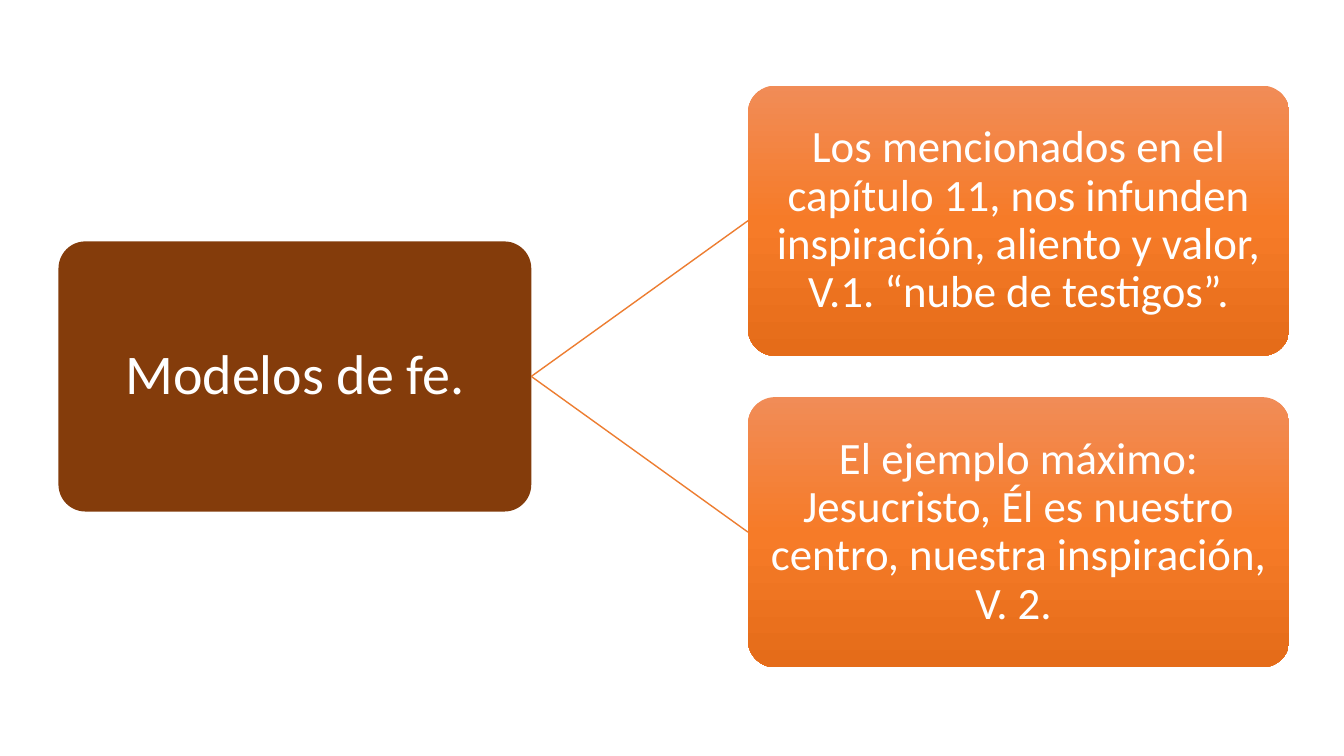
from copy import deepcopy
from dataclasses import dataclass

from pptx import Presentation
from pptx.dml.color import RGBColor
from pptx.enum.shapes import MSO_CONNECTOR, MSO_SHAPE
from pptx.enum.text import MSO_ANCHOR, PP_ALIGN
from pptx.oxml.ns import qn
from pptx.oxml.xmlchemy import OxmlElement
from pptx.shapes.autoshape import Shape
from pptx.slide import Slide
from pptx.util import Inches, Pt

WIDTH, HEIGHT = Inches(13.33), Inches(7.5)
COL, ROW = WIDTH / 100, HEIGHT / 100
TALL = 35.73
GLOW = ("F18C57", "F67B28", "E56C19")
LEFT, RIGHT = 1, 3


@dataclass
class Card:
    text: str
    col: float
    row: float
    cols: float
    size: int
    inset: float
    fill: tuple[str, ...]


def color(code: str) -> RGBColor:
    return RGBColor.from_string(code)


def paint(shape: Shape, codes: tuple[str, ...]) -> None:
    fill = shape.fill
    if len(codes) == 1:
        fill.solid()
        fill.fore_color.rgb = color(codes[0])
        return
    fill.gradient()
    fill.gradient_angle = 270
    stops = shape._element.spPr.find(qn("a:gradFill")).find(qn("a:gsLst"))
    while len(stops) < len(codes):
        stops.append(deepcopy(stops[0]))
    for i, (stop, code) in enumerate(zip(fill.gradient_stops, codes)):
        stop.position = i / (len(codes) - 1)
        stop.color.rgb = color(code)


def draw(slide: Slide, card: Card) -> Shape:
    shape = slide.shapes.add_shape(
        MSO_SHAPE.ROUNDED_RECTANGLE,
        round(card.col * COL), round(card.row * ROW),
        round(card.cols * COL), round(TALL * ROW),
    )
    shape.adjustments[0] = 0.1
    shape.shadow.inherit = False
    shape.line.fill.background()
    paint(shape, card.fill)
    frame = shape.text_frame
    frame.word_wrap = True
    frame.vertical_anchor = MSO_ANCHOR.MIDDLE
    frame.margin_left = frame.margin_right = Inches(card.inset)
    frame.margin_top = frame.margin_bottom = Inches(card.inset)
    para = frame.paragraphs[0]
    para.alignment = PP_ALIGN.CENTER
    para.line_spacing = 0.9
    run = para.add_run()
    run.text = card.text
    run.font.name = "Calibri"
    run.font.size = Pt(card.size)
    run.font.color.rgb = color("FFFFFF")
    return shape


def link(slide: Slide, start: Shape, end: Shape) -> None:
    line = slide.shapes.add_connector(MSO_CONNECTOR.STRAIGHT, 0, 0, 0, 0)
    line.begin_connect(start, RIGHT)
    line.end_connect(end, LEFT)
    line.line.color.rgb = color("ED7D31")
    line.line.width = Pt(1)
    line._element.spPr.append(OxmlElement("a:effectLst"))


def main() -> None:
    deck = Presentation()
    deck.slide_width, deck.slide_height = WIDTH, HEIGHT
    slide = deck.slides.add_slide(deck.slide_layouts[6])
    texts = (
        "Los mencionados en el capítulo 11, nos infunden inspiración, "
        "aliento y valor, V.1. “nube de testigos”.",
        "El ejemplo máximo: Jesucristo, Él es nuestro centro, "
        "nuestra inspiración, V. 2. ",
    )
    root = draw(slide, Card("Modelos de fe.", 4.35, 31.93, 35.18, 40, 0.03, ("843C0B",)))
    for i, text in enumerate(texts):
        leaf = draw(slide, Card(text, 55.66, 11.33 + i * 41.2, 40.28, 32, 0.02, GLOW))
        link(slide, root, leaf)
    deck.save("out.pptx")


if __name__ == "__main__":
    main()
